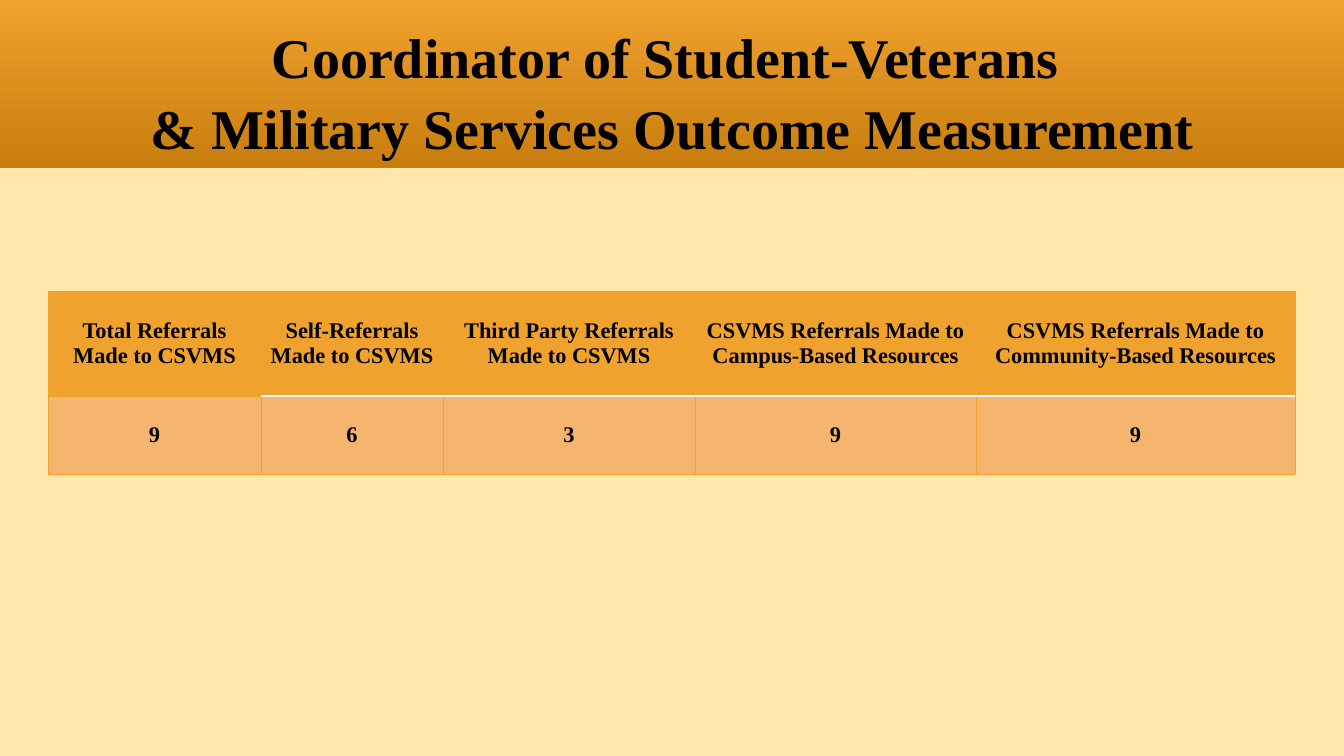
"""Build the student-veterans outcome measurement slide."""
from lxml.etree import SubElement
from pptx import Presentation
from pptx.dml.color import RGBColor
from pptx.enum.shapes import MSO_SHAPE
from pptx.enum.text import MSO_ANCHOR, MSO_AUTO_SIZE, PP_ALIGN
from pptx.oxml.ns import qn
from pptx.util import Pt

PX = 12192000 / 1344
COLORS = {"background": "FFE7AC", "amber": "F0A22E", "bronze": "C87D0E",
          "value": "F5B56E", "rule": "FFFFFF", "text": "000000"}
RGB = {name: RGBColor.from_string(value) for name, value in COLORS.items()}
COLUMNS = [
    (213, "Total Referrals\nMade to CSVMS", "9"),
    (182, "Self-Referrals\nMade to CSVMS", "6"),
    (252, "Third Party Referrals\nMade to CSVMS", "3"),
    (281, "CSVMS Referrals Made to Campus-Based Resources", "9"),
    (319, "CSVMS Referrals Made to Community-Based Resources", "9"),
]
ROWS = [(105, "amber"), (78, "value")]


def px(*lengths):
    return [round(length * PX) for length in lengths]


def write(tf, text, size, spacing):
    tf.text = text
    tf.vertical_anchor = MSO_ANCHOR.MIDDLE
    for p in tf.paragraphs:
        p.alignment = PP_ALIGN.CENTER
        p.line_spacing = spacing
        for r in p.runs:
            r.font.name = "Times New Roman"
            r.font.size = Pt(size)
            r.font.bold = True
            r.font.color.rgb = RGB["text"]


prs = Presentation()
prs.slide_width, prs.slide_height = px(1344, 756)
s = prs.slides.add_slide(prs.slide_layouts[5])
s.background.fill.solid()
s.background.fill.fore_color.rgb = RGB["background"]

title = s.shapes.title
title.left, title.top, title.width, title.height = px(134, 17, 1076, 146)
write(title.text_frame, "Coordinator of Student-Veterans \n& Military Services Outcome Measurement", 40, 1.05)
title.text_frame.word_wrap = False
title.text_frame.auto_size = MSO_AUTO_SIZE.NONE

banner = s.shapes.add_shape(MSO_SHAPE.RECTANGLE, *px(0, 0, 1344, 168))
banner.shadow.inherit = False
banner.line.fill.background()
banner.fill.gradient()
banner.fill.gradient_angle = 270
for stop, position, color in zip(banner.fill.gradient_stops, (0, 1), ("amber", "bronze")):
    stop.position = position
    stop.color.rgb = RGB[color]
title.element.addprevious(banner.element)

width = sum(column[0] for column in COLUMNS)
height = sum(row[0] for row in ROWS)
table = s.shapes.add_table(len(ROWS), len(COLUMNS), *px(48, 291, width, height)).table
for row, (row_height, fill) in enumerate(ROWS):
    table.rows[row].height = px(row_height)[0]
    for col, (col_width, *texts) in enumerate(COLUMNS):
        table.columns[col].width = px(col_width)[0]
        cell = table.cell(row, col)
        cell.margin_left, cell.margin_right, cell.margin_top, cell.margin_bottom = px(7, 7, 0, 0)
        write(cell.text_frame, texts[row], 16, 1.0)
        cell.vertical_anchor = MSO_ANCHOR.MIDDLE
        tcPr = cell._tc.get_or_add_tcPr()
        for side in ("lnL", "lnR", "lnT", "lnB"):
            ruled = col > 0 and (row, side) in ((0, "lnB"), (1, "lnT"))
            ln = SubElement(tcPr, qn(f"a:{side}"), w=str(Pt(1 if ruled else 0.5)))
            color = SubElement(SubElement(ln, qn("a:solidFill")), qn("a:srgbClr"))
            color.set("val", COLORS["rule" if ruled else "amber"])
        cell.fill.solid()
        cell.fill.fore_color.rgb = RGB[fill]

prs.save("out.pptx")
